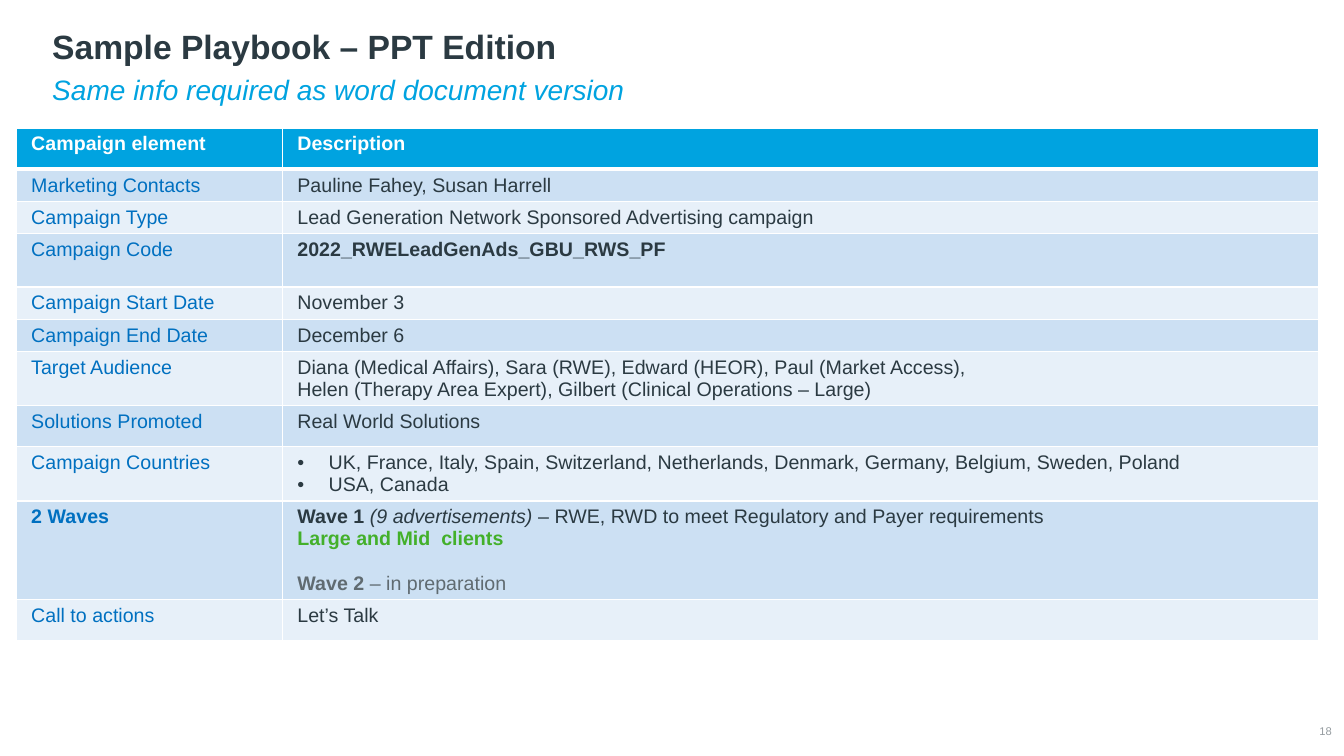
from lxml import etree
from pptx import Presentation, util as u
from pptx.dml.color import RGBColor
from pptx.enum.text import MSO_ANCHOR, PP_ALIGN
from pptx.oxml import ns

COLORS = {
    "ink": "2B3A42", "cyan": "00A3E0", "blue": "0070C0", "green": "43B02A",
    "gray": "606B71", "pale gray": "959CA0", "white": "FFFFFF",
    "dark band": "CCE0F3", "light band": "E7F0F9",
}
FONT = "Arial"
BOLD, ITALIC = {"bold": True}, {"italic": True}

# Text boxes: left, top, width, height, inset, anchor, alignment, line spacing, text, format
BOXES = [
    (0.42, -0.13, 12.4, 0.84, 0.1, MSO_ANCHOR.BOTTOM, PP_ALIGN.LEFT, 0.9,
     "Sample Playbook – PPT Edition", {"size": 24, "color": "ink", "bold": True}),
    (0.42, 0.71, 12.4, 0.44, 0.1, MSO_ANCHOR.TOP, PP_ALIGN.LEFT, 0.9,
     "Same info required as word document version",
     {"size": 20, "color": "cyan", "italic": True}),
    (12.82, 7.16, 0.39, 0.19, 0, MSO_ANCHOR.MIDDLE, PP_ALIGN.RIGHT, 1.0,
     "18", {"size": 8, "color": "pale gray"}),
]

# Table rows: height, element, its format, description paragraphs (lists of runs)
TABLE_AT = (0.16, 1.27)
COLUMNS = (2.64, 10.28)
LINE, TALL, DOUBLE, WAVES = 0.31, 0.41, 0.53, 0.97
ROWS = [
    (TALL, "Campaign element", BOLD, [[("Description", BOLD)]]),
    (LINE, "Marketing Contacts", {}, [[("Pauline Fahey, Susan Harrell", {})]]),
    (LINE, "Campaign Type", {},
     [[("Lead Generation Network Sponsored Advertising campaign", {})]]),
    (DOUBLE, "Campaign Code", {}, [[("2022_RWELeadGenAds_GBU_RWS_PF", BOLD)]]),
    (LINE, "Campaign Start Date", {}, [[("November 3", {})]]),
    (LINE, "Campaign End Date", {}, [[("December 6", {})]]),
    (DOUBLE, "Target Audience", {}, [
        [("Diana (Medical Affairs), Sara (RWE), Edward (HEOR), Paul (Market Access),", {})],
        [("Helen (Therapy Area Expert), Gilbert (Clinical Operations – Large)", {})]]),
    (TALL, "Solutions Promoted", {}, [[("Real World Solutions", {})]]),
    (DOUBLE, "Campaign Countries", {}, [
        [("UK, France, Italy, Spain, Switzerland, Netherlands, Denmark, Germany, "
          "Belgium, Sweden, Poland", {})],
        [("USA, Canada", {})]]),
    (WAVES, "2 Waves", BOLD, [
        [("Wave 1 ", BOLD), ("(9 advertisements) ", ITALIC),
         ("– RWE, RWD to meet Regulatory and Payer requirements", {})],
        [("Large and Mid  clients", {"color": "green", "bold": True})],
        [("Wave 2 ", {"color": "gray", "bold": True}),
         ("– in preparation", {"color": "gray"})]]),
    (TALL, "Call to actions", {}, [[("Let’s Talk", {})]]),
]
BULLETED = {"Campaign Countries"}
GAP_BEFORE = {"Wave 2 ": 16}


def rgb(name):
    return RGBColor.from_string(COLORS[name])


def add_run(p, words, fmt):
    r = p.add_run()
    r.text = words
    values = {"name": FONT, "size": 14, "bold": False, "italic": False, **fmt}
    r.font.color.rgb = rgb(values.pop("color"))
    values["size"] = u.Pt(values["size"])
    for key, value in values.items():
        setattr(r.font, key, value)


def add_bullet(p):
    pPr = p._p.get_or_add_pPr()
    indent = u.Inches(0.31)
    pPr.set("marL", str(indent))
    pPr.set("indent", str(-indent))
    etree.SubElement(pPr, ns.qn("a:buFont")).set("typeface", FONT)
    etree.SubElement(pPr, ns.qn("a:buChar")).set("char", "•")


def add_borders(cell, top, bottom):
    tcPr = cell._tc.get_or_add_tcPr()
    for side, width in (("L", 1), ("R", 1), ("T", top), ("B", bottom)):
        ln = etree.SubElement(tcPr, ns.qn(f"a:ln{side}"), w=str(u.Pt(width)))
        fill = etree.SubElement(ln, ns.qn("a:solidFill"))
        etree.SubElement(fill, ns.qn("a:srgbClr")).set("val", COLORS["white"])


def fill_cell(cell, paragraphs, color, bulleted=False):
    tf = cell.text_frame
    for i, runs in enumerate(paragraphs):
        p = tf.add_paragraph() if i else tf.paragraphs[0]
        if bulleted:
            add_bullet(p)
        if runs[0][0] in GAP_BEFORE:
            p.space_before = u.Pt(GAP_BEFORE[runs[0][0]])
        for words, fmt in runs:
            add_run(p, words, {"color": color, **fmt})


def add_table(slide):
    heights = [row[0] for row in ROWS]
    frame = slide.shapes.add_table(
        len(ROWS), len(COLUMNS),
        *map(u.Inches, (*TABLE_AT, sum(COLUMNS), sum(heights))))
    table = frame.table
    for column, width in zip(table.columns, COLUMNS):
        column.width = u.Inches(width)
    for i, (height, element, fmt, description) in enumerate(ROWS):
        table.rows[i].height = u.Inches(height)
        band = ("dark band" if i % 2 else "light band") if i else "cyan"
        colors = ("blue", "ink") if i else ("white", "white")
        contents = ([[(element, fmt)]], description)
        for j, (paragraphs, color) in enumerate(zip(contents, colors)):
            cell = table.cell(i, j)
            cell.margin_left = cell.margin_right = u.Inches(0.15)
            cell.margin_top = cell.margin_bottom = u.Inches(0.05)
            add_borders(cell, 3 if i == 1 else 1, 3 if i == 0 else 1)
            cell.fill.solid()
            cell.fill.fore_color.rgb = rgb(band)
            fill_cell(cell, paragraphs, color, j == 1 and element in BULLETED)


def add_box(slide, left, top, width, height, inset, anchor, align, spacing, words, fmt):
    sp = slide.shapes.add_textbox(*map(u.Inches, (left, top, width, height)))
    tf = sp.text_frame
    tf.word_wrap = True
    tf.vertical_anchor = anchor
    tf.margin_left = tf.margin_right = u.Inches(inset)
    tf.margin_top = tf.margin_bottom = u.Inches(inset / 2)
    p = tf.paragraphs[0]
    p.alignment = align
    p.line_spacing = spacing
    add_run(p, words, fmt)


def main():
    prs = Presentation()
    prs.slide_width, prs.slide_height = u.Inches(13.33), u.Inches(7.5)
    slide = prs.slides.add_slide(prs.slide_layouts[6])
    add_table(slide)
    for box in BOXES:
        add_box(slide, *box)
    prs.save("out.pptx")


if __name__ == "__main__":
    main()
